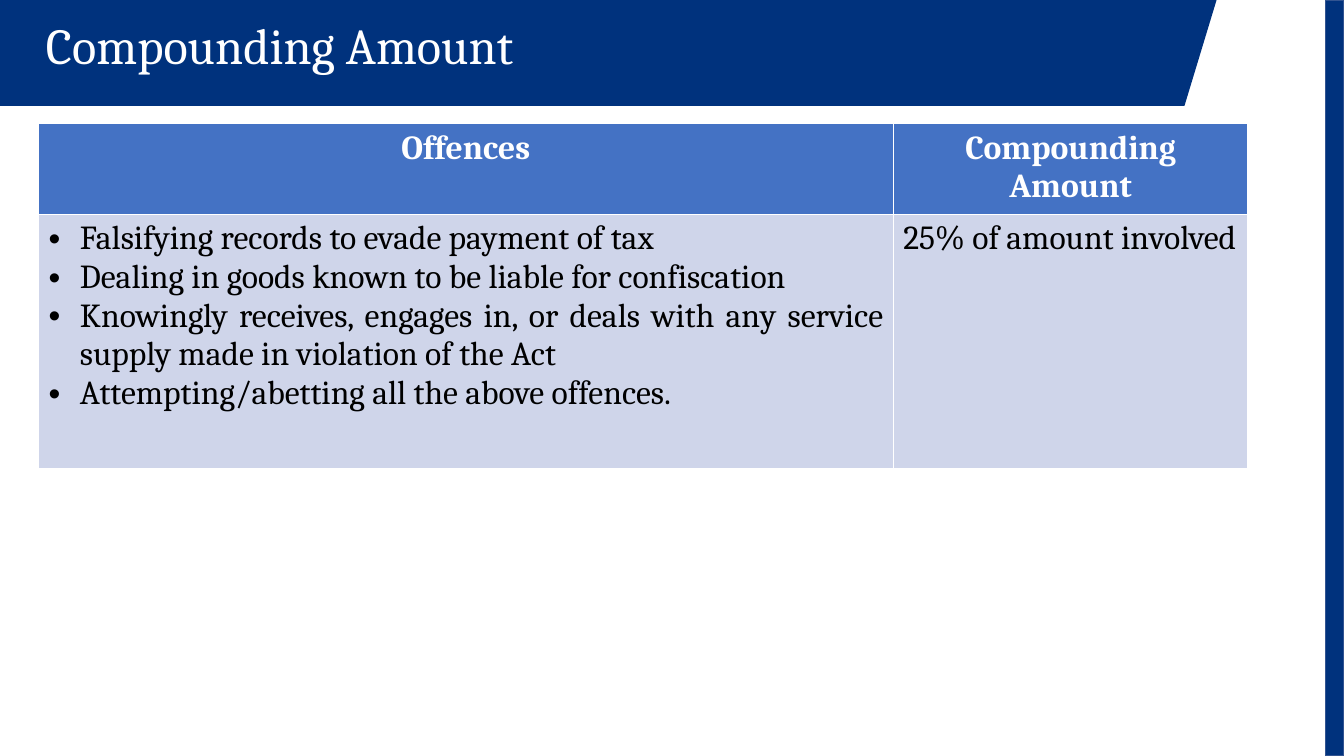
"""Build the Compounding Amount slide with its table of offences."""
from lxml import etree
from pptx import Presentation
from pptx.dml.color import RGBColor
from pptx.enum.shapes import MSO_SHAPE
from pptx.enum.text import MSO_ANCHOR, PP_ALIGN
from pptx.oxml.ns import qn
from pptx.util import Cm, Pt

TITLE = "Compounding Amount"
HEADS = ["Offences", "Compounding Amount"]
CELLS = [
    [
        "Falsifying records to evade payment of tax",
        "Dealing in goods known to be liable for confiscation ",
        "Knowingly receives, engages in, or deals with any service supply "
        "made in violation of the Act",
        "Attempting/abetting all the above offences.",
    ],
    ["25% of amount involved"],
]

NAVY = RGBColor(0x00, 0x32, 0x7D)
EDGE = RGBColor(0x32, 0x54, 0x91)
BLUE = RGBColor(0x44, 0x72, 0xC4)
PALE = RGBColor(0xCF, 0xD5, 0xEA)
WHITE = RGBColor(0xFF, 0xFF, 0xFF)
BLACK = RGBColor(0x00, 0x00, 0x00)
RECT = MSO_SHAPE.RECTANGLE
TOP = MSO_ANCHOR.TOP
LEFT, MID, JUST = PP_ALIGN.LEFT, PP_ALIGN.CENTER, PP_ALIGN.JUSTIFY

WIDE, HIGH = Cm(33.87), Cm(19.05)
BAR = Cm(0.46)
BAND = [(0, 0), (0, 2.67), (29.85, 2.67), (30.66, 0)]
COLS = [Cm(21.54), Cm(8.94)]
ROWS = [Cm(2.2), Cm(6.4)]
INDENT = Cm(0.79)


def write(frame, lines, size=24, color=BLACK, bold=False, align=LEFT,
          bullet=False, before=None, leading=None):
    frame.word_wrap = True
    for i, line in enumerate(lines):
        para = frame.add_paragraph() if i else frame.paragraphs[0]
        para.alignment = align
        para.space_before = before
        para.line_spacing = leading
        run = para.add_run()
        run.text = line
        font = run.font
        font.name, font.size, font.bold = "Cambria", Pt(size), bold
        font.color.rgb = color
        if bullet:
            props = para._p.get_or_add_pPr()
            props.set("marL", str(INDENT))
            props.set("indent", str(-INDENT))
            etree.SubElement(props, qn("a:buFont"), typeface="Arial")
            etree.SubElement(props, qn("a:buChar"), char="•")


def paint(shape, fill):
    shape.shadow.inherit = False
    shape.fill.solid()
    shape.fill.fore_color.rgb = fill


def main():
    deck = Presentation()
    deck.slide_width, deck.slide_height = WIDE, HIGH
    shapes = deck.slides.add_slide(deck.slide_layouts[6]).shapes

    points = [(Cm(x), Cm(y)) for x, y in BAND]
    path = shapes.build_freeform(*points[0])
    path.add_line_segments(points[1:], close=True)
    band = path.convert_to_shape()
    paint(band, NAVY)
    band.line.fill.background()

    bar = shapes.add_shape(RECT, WIDE - BAR, 0, BAR, HIGH)
    paint(bar, NAVY)
    bar.line.color.rgb = EDGE
    bar.line.width = Pt(1)

    title = shapes.add_textbox(Cm(0.91), Cm(0.41), Cm(23.34), Cm(1.63))
    title.text_frame.vertical_anchor = TOP
    write(title.text_frame, [TITLE], size=36, color=WHITE,
          before=Pt(10), leading=0.9)

    grid = shapes.add_table(2, 2, Cm(0.97), Cm(3.12), sum(COLS), sum(ROWS)).table
    for row, high in zip(grid.rows, ROWS):
        row.height = high
    for i, wide in enumerate(COLS):
        grid.columns[i].width = wide
        head, body = grid.cell(0, i), grid.cell(1, i)
        for cell, fill in ((head, BLUE), (body, PALE)):
            cell.fill.solid()
            cell.fill.fore_color.rgb = fill
        write(head.text_frame, [HEADS[i]], color=WHITE, bold=True, align=MID)
        write(body.text_frame, CELLS[i], align=JUST, bullet=len(CELLS[i]) > 1)

    deck.save("out.pptx")


if __name__ == "__main__":
    main()
